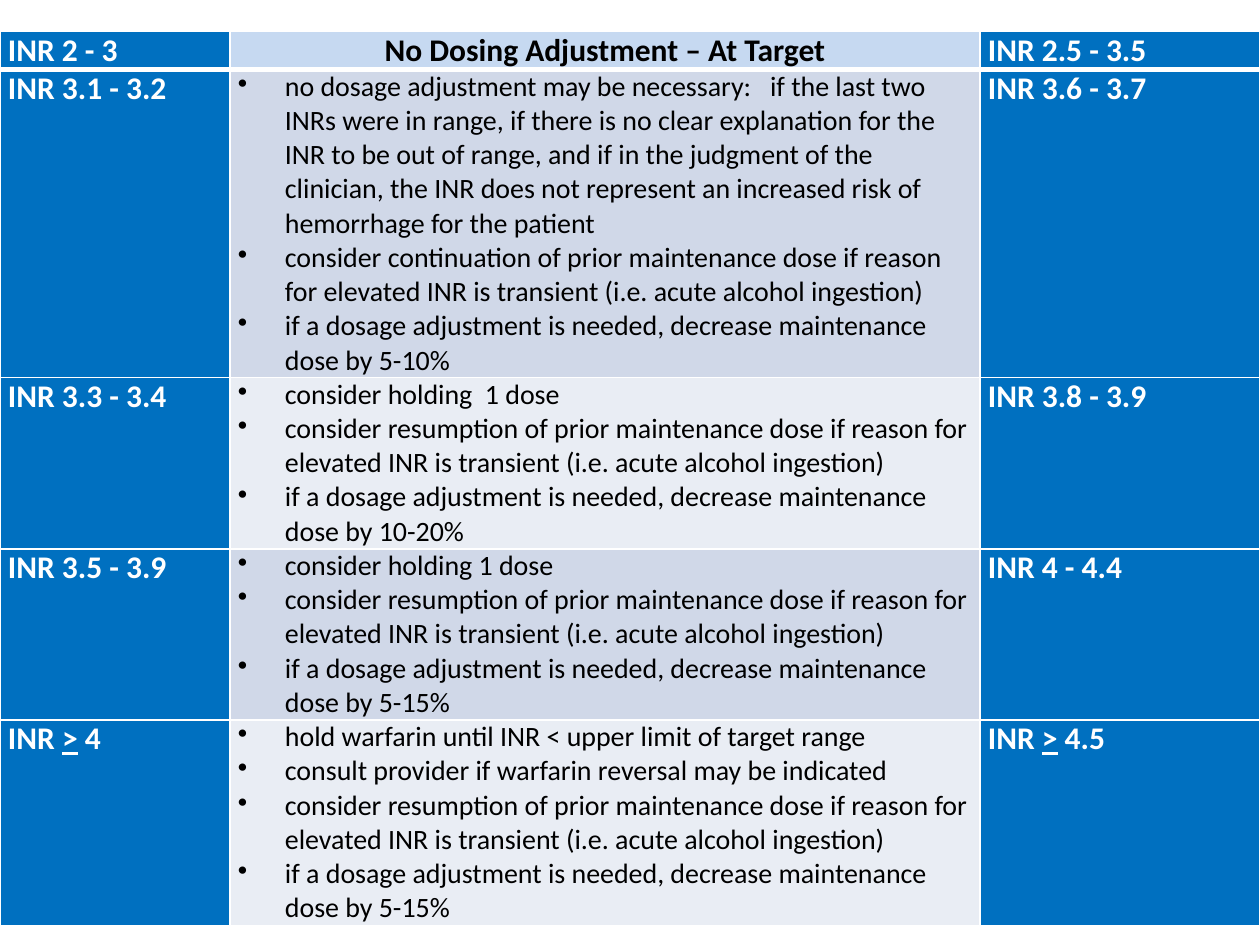
from dataclasses import dataclass

from lxml.etree import SubElement
from pptx import Presentation
from pptx.dml.color import RGBColor as RGB
from pptx.enum.text import PP_ALIGN as Align
from pptx.oxml import parse_xml
from pptx.oxml.ns import nsdecls, qn
from pptx.util import Emu, Pt

PX_PER_INCH = 126


def px(n: int) -> Emu:
    return Emu(round(n * 914400 / PX_PER_INCH))


@dataclass(frozen=True)
class Theme:
    font: str = "Calibri"
    label_size: int = 18
    body_size: int = 16
    label_fill: str = "0070C0"
    header_fill: str = "C6D9F1"
    bands: tuple[str, str] = ("D0D8E8", "E9EDF4")
    light: str = "FFFFFF"
    dark: str = "000000"
    border: int = 1
    header_border: int = 3


@dataclass(frozen=True)
class DoseRow:
    standard_inr: str
    actions: tuple[str, ...]
    high_inr: str
    height: int


THEME = Theme()
TOP, HEADER_HEIGHT = 31, 38
COLUMNS = (230, 750, 280)
CELL_INSET, BULLET_INDENT = 8, 47

TRANSIENT = "of prior maintenance dose if reason for elevated INR is transient (i.e. acute alcohol ingestion)"
RESUME = f"consider resumption {TRANSIENT}"


def decrease(percent: str) -> str:
    return f"if a dosage adjustment is needed, decrease maintenance dose by {percent}"


HEADER = ("INR 2 - 3", "No Dosing Adjustment – At Target", "INR 2.5 - 3.5")
ROWS = (
    DoseRow("INR 3.1 - 3.2", (
        "no dosage adjustment may be necessary:   if the last two INRs were in range, "
        "if there is no clear explanation for the INR to be out of range, and if in the "
        "judgment of the clinician, the INR does not represent an increased risk of "
        "hemorrhage for the patient",
        f"consider continuation {TRANSIENT}",
        decrease("5-10%"),
    ), "INR 3.6 - 3.7", 304),
    DoseRow("INR 3.3 - 3.4", ("consider holding  1 dose", RESUME, decrease("10-20%")),
            "INR 3.8 - 3.9", 169),
    DoseRow("INR 3.5 - 3.9", ("consider holding 1 dose", RESUME, decrease("5-15%")),
            "INR 4 - 4.4", 169),
    DoseRow("INR > 4", (
        "hold warfarin until INR < upper limit of target range",
        "consult provider if warfarin reversal may be indicated",
        RESUME,
        decrease("5-15%"),
    ), "INR > 4.5", 203),
)


def style_cell(cell, fill: str, top: int, bottom: int) -> None:
    """Set the fill, insets and white borders, with top and bottom widths in points."""
    cell.margin_left = cell.margin_right = px(CELL_INSET)
    cell.margin_top = cell.margin_bottom = 0
    cell.fill.solid()
    cell.fill.fore_color.rgb = RGB.from_string(fill)
    widths = {"lnL": THEME.border, "lnR": THEME.border, "lnT": top, "lnB": bottom}
    tc_pr = cell._tc.get_or_add_tcPr()
    for i, (side, width) in enumerate(widths.items()):
        tc_pr.insert(i, parse_xml(
            f'<a:{side} {nsdecls("a")} w="{Pt(width)}"><a:solidFill>'
            f'<a:srgbClr val="{THEME.light}"/></a:solidFill></a:{side}>'))


def style_paragraph(p, size: int, color: str, bold: bool) -> None:
    p.font.name = THEME.font
    p.font.size = Pt(size)
    p.font.bold = bold
    p.font.color.rgb = RGB.from_string(color)


def write_label(cell, text: str, color: str = THEME.light) -> None:
    """Write a bold label, underlining ">" so that it reads as "at least"."""
    p = cell.text_frame.paragraphs[0]
    before, sign, after = text.partition(">")
    for part in filter(None, (before, sign, after)):
        r = p.add_run()
        r.text = part
        if part == ">":
            r.font.underline = True
    style_paragraph(p, THEME.label_size, color, True)


def write_bullets(cell, items: tuple[str, ...]) -> None:
    tf = cell.text_frame
    for i, item in enumerate(items):
        p = tf.add_paragraph() if i else tf.paragraphs[0]
        p.add_run().text = item
        p_pr = p._p.get_or_add_pPr()
        p_pr.set("marL", str(px(BULLET_INDENT)))
        p_pr.set("indent", str(-px(BULLET_INDENT)))
        SubElement(p_pr, qn("a:buChar"), char="•")
        style_paragraph(p, THEME.body_size, THEME.dark, False)


def add_dose_table(slide) -> None:
    heights = (HEADER_HEIGHT, *(row.height for row in ROWS))
    table = slide.shapes.add_table(
        len(heights), len(COLUMNS), 0, px(TOP), px(sum(COLUMNS)), px(sum(heights))).table
    table.first_row = table.horz_banding = False
    for column, width in zip(table.columns, COLUMNS):
        column.width = px(width)
    for table_row, height in zip(table.rows, heights):
        table_row.height = px(height)

    middle_fills = (THEME.header_fill, *(THEME.bands[i % 2] for i in range(len(ROWS))))
    for i, middle_fill in enumerate(middle_fills):
        top = THEME.header_border if i == 1 else THEME.border
        bottom = THEME.header_border if i == 0 else THEME.border
        for j, fill in enumerate((THEME.label_fill, middle_fill, THEME.label_fill)):
            style_cell(table.cell(i, j), fill, top, bottom)

    for j, text in enumerate(HEADER):
        write_label(table.cell(0, j), text, THEME.dark if j == 1 else THEME.light)
    table.cell(0, 1).text_frame.paragraphs[0].alignment = Align.CENTER
    for i, row in enumerate(ROWS, start=1):
        write_label(table.cell(i, 0), row.standard_inr)
        write_bullets(table.cell(i, 1), row.actions)
        write_label(table.cell(i, 2), row.high_inr)


def main() -> None:
    prs = Presentation()
    prs.slide_width, prs.slide_height = px(1260), px(945)
    add_dose_table(prs.slides.add_slide(prs.slide_layouts[6]))
    prs.save("out.pptx")


if __name__ == "__main__":
    main()
